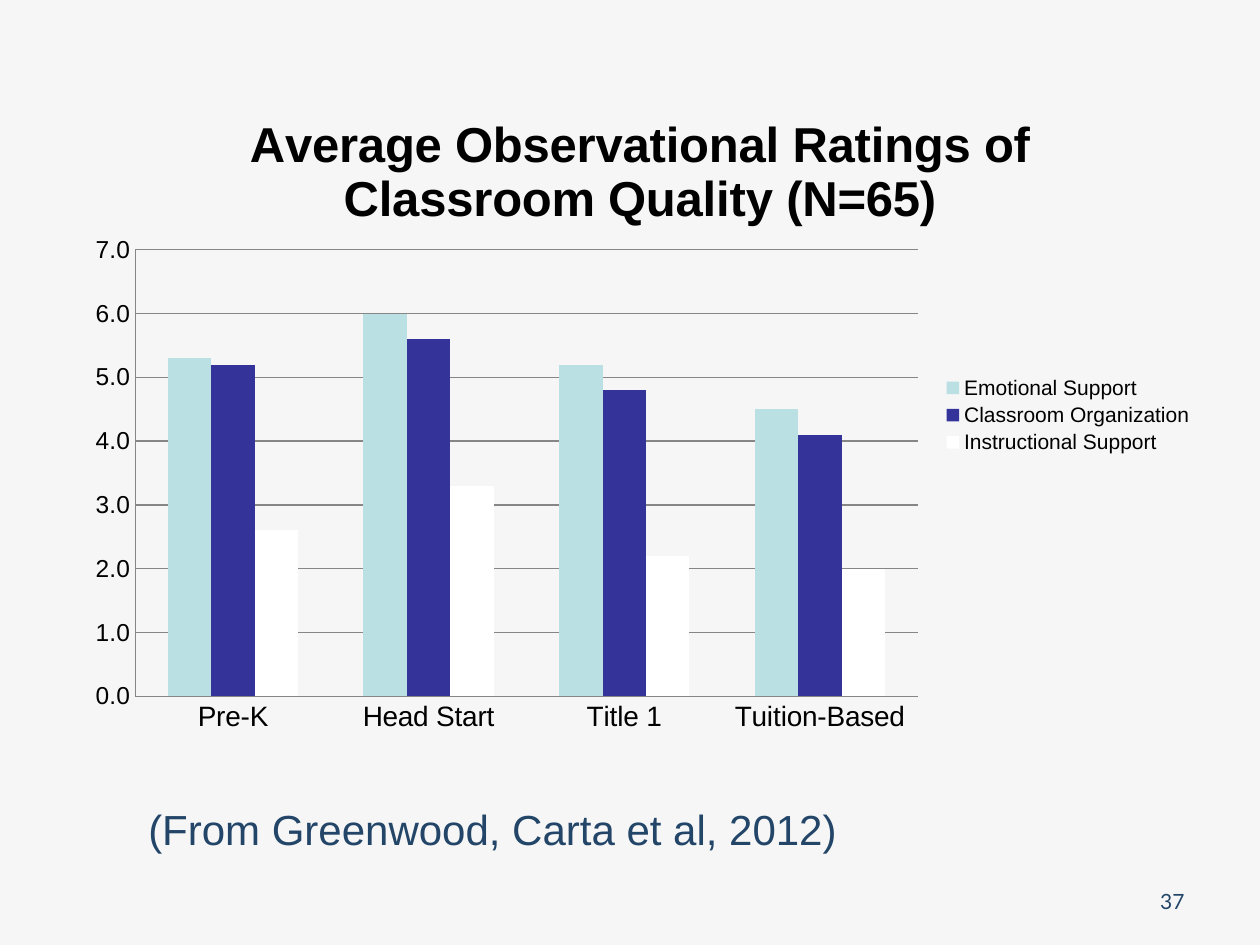
"""Build a slide with a clustered column chart of classroom quality ratings."""
from dataclasses import dataclass

from lxml import etree
from pptx import Presentation
from pptx.chart.chart import Chart
from pptx.chart.data import CategoryChartData
from pptx.dml.color import RGBColor
from pptx.dml.fill import FillFormat
from pptx.enum.chart import XL_CHART_TYPE, XL_LEGEND_POSITION, XL_TICK_MARK
from pptx.enum.text import MSO_ANCHOR, PP_ALIGN
from pptx.oxml.ns import qn
from pptx.slide import Slide
from pptx.text.text import Font
from pptx.util import Cm, Pt

CLUSTERED = XL_CHART_TYPE.COLUMN_CLUSTERED
LEGEND_RIGHT = XL_LEGEND_POSITION.RIGHT
NO_TICK = XL_TICK_MARK.NONE
LEFT, RIGHT = PP_ALIGN.LEFT, PP_ALIGN.RIGHT
TOP, MIDDLE = MSO_ANCHOR.TOP, MSO_ANCHOR.MIDDLE

BACKGROUND, BLACK, NAVY, GREY = "F6F6F6", "000000", "224568", "868686"
TITLE = "Average Observational Ratings of Classroom Quality (N=65)"
CATEGORIES = ("Pre-K", "Head Start", "Title 1", "Tuition-Based")
PLOT_LAYOUT = {"x": 0.055, "y": 0.25, "w": 0.69, "h": 0.675}


@dataclass(frozen=True)
class Rating:
    name: str
    values: tuple[float, ...]
    color: str


@dataclass(frozen=True)
class Caption:
    text: str
    left: float
    top: float
    width: float
    height: float
    size: int
    font: str
    align: PP_ALIGN
    anchor: MSO_ANCHOR


RATINGS = (
    Rating("Emotional Support", (5.3, 6, 5.2, 4.5), "BBE0E3"),
    Rating("Classroom Organization", (5.2, 5.6, 4.8, 4.1), "333399"),
    Rating("Instructional Support", (2.6, 3.3, 2.2, 2), "FFFFFF"),
)
CAPTIONS = (
    Caption("37", 18.21, 17.65, 5.92, 1.02, 12, "Lato", RIGHT, MIDDLE),
    Caption("(From Greenwood, Carta et al, 2012)",
            2.74, 16.08, 19.48, 1.27, 24, "Arial", LEFT, TOP),
)


def rgb(color: str) -> RGBColor:
    """Turn a hex string into a colour."""
    return RGBColor.from_string(color)


def paint(fill: FillFormat, color: str) -> None:
    """Make a fill solid in one colour."""
    fill.solid()
    fill.fore_color.rgb = rgb(color)


def style_font(font: Font, size: int, color: str = BLACK,
               name: str = "Arial", bold: bool = False) -> None:
    """Set the face, size, weight and colour of a font."""
    font.name, font.size, font.bold = name, Pt(size), bold
    font.color.rgb = rgb(color)


def add_caption(page: Slide, caption: Caption) -> None:
    """Add a one-line text box."""
    box = page.shapes.add_textbox(Cm(caption.left), Cm(caption.top),
                                  Cm(caption.width), Cm(caption.height))
    frame = box.text_frame
    frame.word_wrap = True
    frame.vertical_anchor = caption.anchor
    para = frame.paragraphs[0]
    para.alignment = caption.align
    span = para.add_run()
    span.text = caption.text
    style_font(span.font, caption.size, NAVY, caption.font)


def place_plot(chart: Chart) -> None:
    """Fix the inner plot area as fractions of the chart."""
    plot_area = chart.element.find(f".//{qn('c:plotArea')}")
    for layout in plot_area.findall(qn("c:layout")):
        plot_area.remove(layout)
    layout = etree.Element(qn("c:layout"))
    plot_area.insert(0, layout)
    manual = etree.SubElement(layout, qn("c:manualLayout"))
    settings = {"layoutTarget": "inner", "xMode": "edge", "yMode": "edge"} | PLOT_LAYOUT
    for tag, value in settings.items():
        etree.SubElement(manual, qn(f"c:{tag}")).set("val", str(value))


def style_axes(chart: Chart) -> None:
    """Style both axes and the gridlines."""
    for axis, size in ((chart.category_axis, 16), (chart.value_axis, 14)):
        axis.major_tick_mark = axis.minor_tick_mark = NO_TICK
        axis.format.line.color.rgb = rgb(GREY)
        style_font(axis.tick_labels.font, size)
    scale = chart.value_axis
    scale.minimum_scale, scale.maximum_scale, scale.major_unit = 0, 7, 1
    scale.has_major_gridlines = True
    scale.major_gridlines.format.line.color.rgb = rgb(GREY)
    scale.tick_labels.number_format = "0.0"
    scale.tick_labels.number_format_is_linked = False


def add_ratings_chart(page: Slide) -> None:
    """Add the column chart with its title and legend."""
    data = CategoryChartData(number_format="0.0")
    data.categories = CATEGORIES
    for rating in RATINGS:
        data.add_series(rating.name, rating.values)
    chart = page.shapes.add_chart(CLUSTERED, Cm(1.47), Cm(1.7),
                                  Cm(22.86), Cm(13.34), data).chart
    style_font(chart.font, 10)
    chart.has_title = True
    span = chart.chart_title.text_frame.paragraphs[0].add_run()
    span.text = TITLE
    style_font(span.font, 28, bold=True)
    chart.chart_title.include_in_layout = False
    chart.has_legend = True
    chart.legend.position = LEGEND_RIGHT
    chart.legend.include_in_layout = False
    style_font(chart.legend.font, 12)
    plot = chart.plots[0]
    plot.gap_width, plot.overlap, plot.vary_by_categories = 150, 0, False
    for series, rating in zip(plot.series, RATINGS):
        series.invert_if_negative = False
        paint(series.format.fill, rating.color)
    style_axes(chart)
    place_plot(chart)


def main() -> None:
    """Build and save the deck."""
    deck = Presentation()
    deck.slide_width, deck.slide_height = Cm(25.4), Cm(19.05)
    page = deck.slides.add_slide(deck.slide_layouts[6])
    paint(page.background.fill, BACKGROUND)
    add_ratings_chart(page)
    for caption in CAPTIONS:
        add_caption(page, caption)
    deck.save("out.pptx")


if __name__ == "__main__":
    main()
